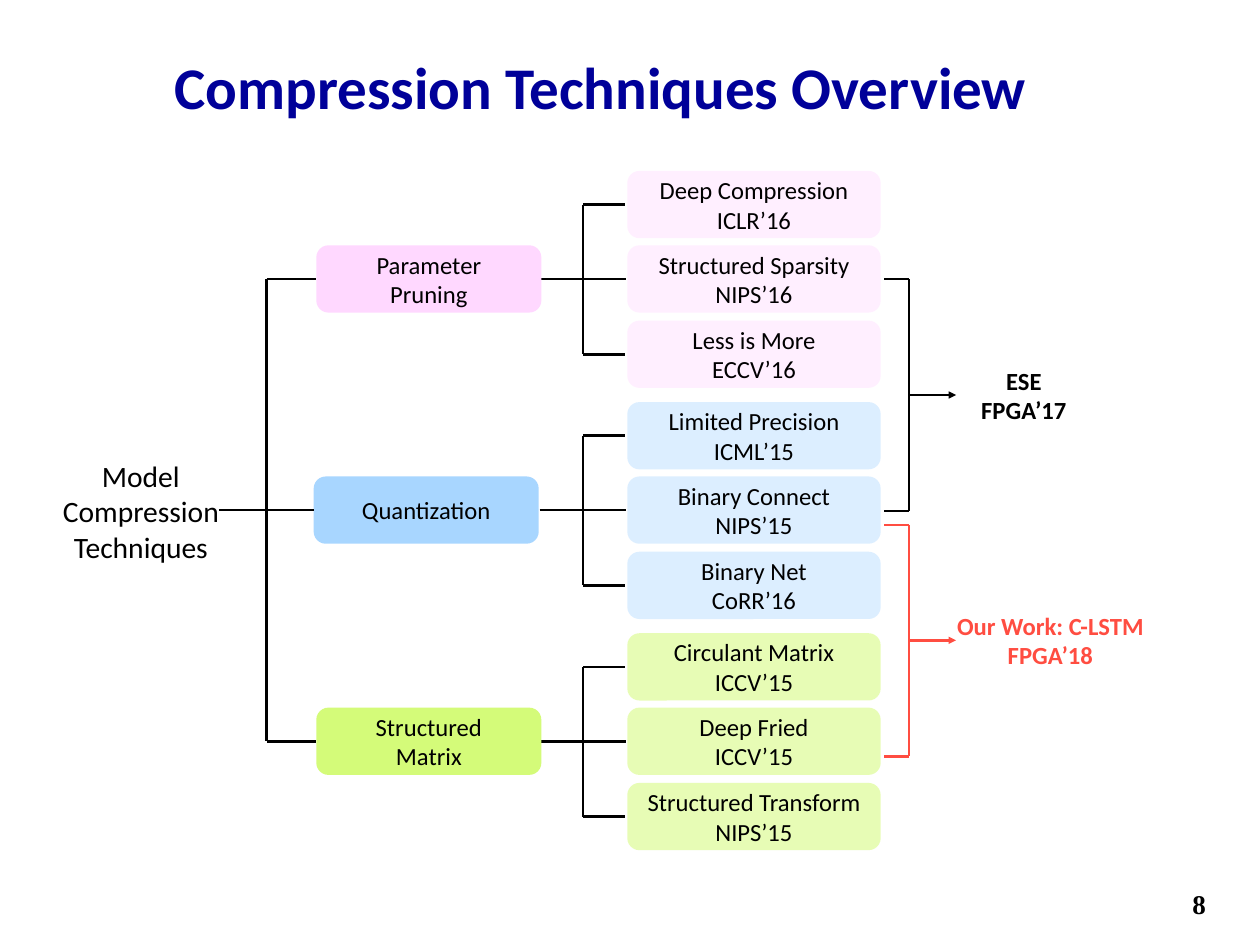
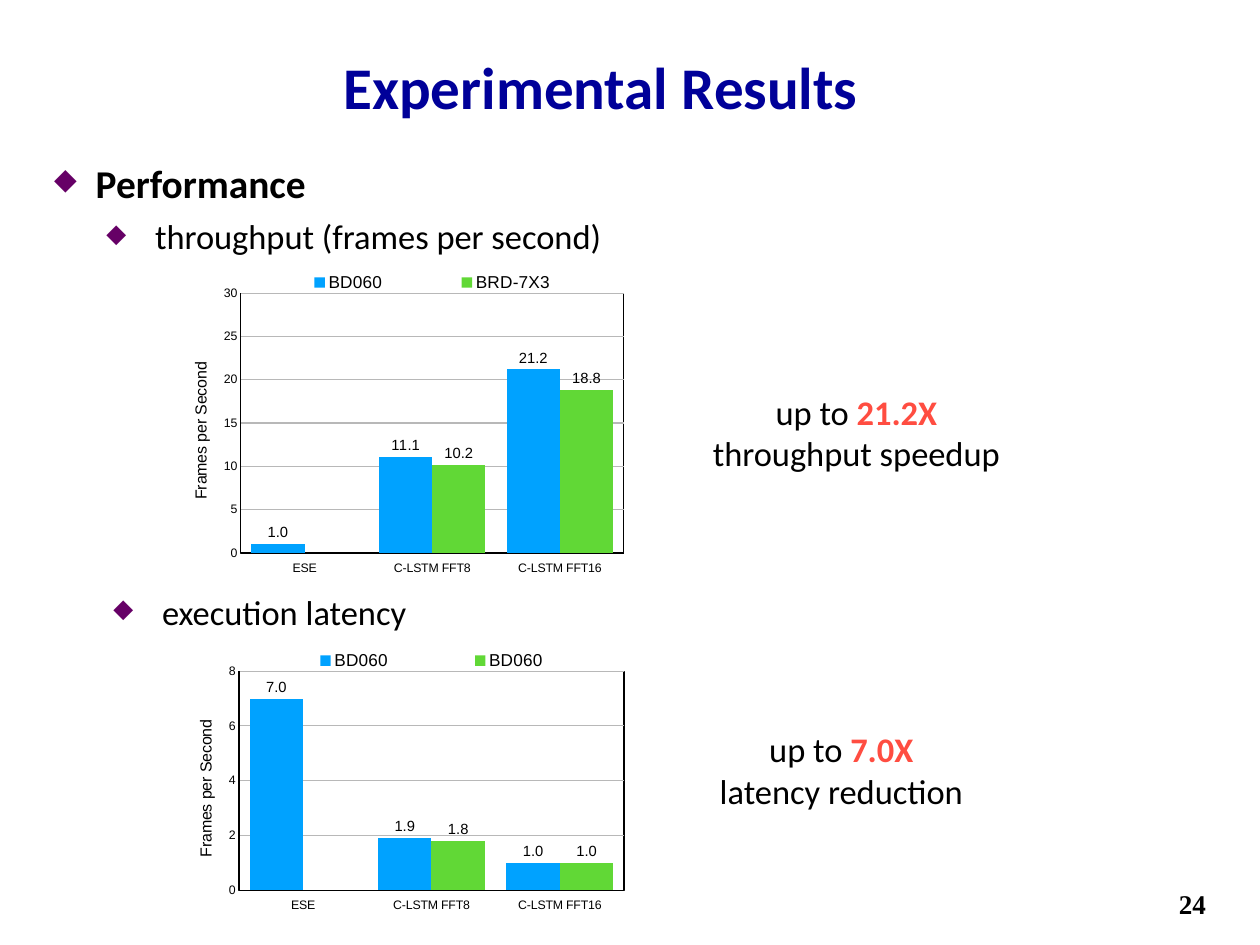
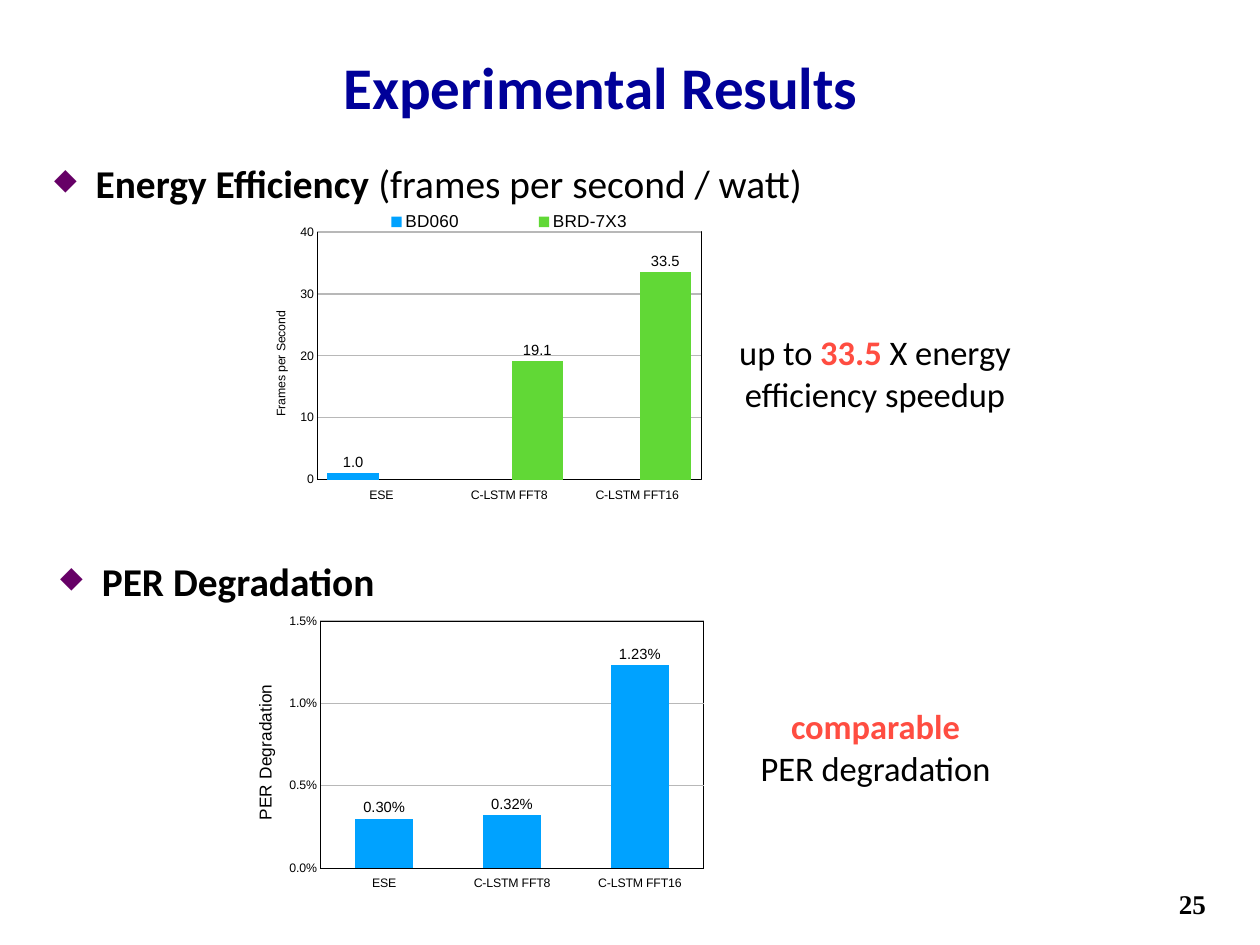
from lxml.etree import SubElement
from pptx import Presentation
from pptx.chart.data import CategoryChartData
from pptx.dml.color import RGBColor
from pptx.enum.chart import (XL_CHART_TYPE, XL_LABEL_POSITION, XL_LEGEND_POSITION,
                             XL_TICK_LABEL_POSITION, XL_TICK_MARK)
from pptx.enum.shapes import MSO_CONNECTOR, MSO_SHAPE
from pptx.enum.text import MSO_ANCHOR, PP_ALIGN
from pptx.oxml import parse_xml
from pptx.oxml.ns import nsdecls, qn
from pptx.util import Pt

PX = 9144  # 100 px to the inch
COLORS = {
    "title": "000099", "text": "000000", "accent": "FF4D41", "bullet": "660066",
    "pink": "FFD8FF", "sky": "A8D6FF", "lime": "D4FB79",
    "blue": "00A2FF", "green": "61D836", "grid": "B8B8B8",
}
RGB = {name: RGBColor.from_string(value) for name, value in COLORS.items()}
RUN_STYLES = {
    "plain": {"bold": False, "color": "text"},
    "bold": {"bold": True, "color": "text"},
    "accent": {"bold": True, "color": "accent"},
    "title": {"bold": True, "color": "title"},
}


def write_text(shape, lines, size, align=PP_ALIGN.CENTER, font="Calibri",
               anchor=MSO_ANCHOR.MIDDLE, inset=6, wrap=False, spacing=None):
    """Fill a shape; each line is a list of (text, run style) pairs."""
    frame = shape.text_frame
    frame.word_wrap = wrap
    frame.vertical_anchor = anchor
    for side in ("left", "top", "right", "bottom"):
        setattr(frame, f"margin_{side}", inset * PX)
    for index, runs in enumerate(lines):
        paragraph = frame.add_paragraph() if index else frame.paragraphs[0]
        paragraph.alignment = align
        paragraph.line_spacing = spacing
        for text, style in runs:
            run = paragraph.add_run()
            run.text = text
            run.font.name = font
            run.font.size = Pt(size)
            run.font.bold = RUN_STYLES[style]["bold"]
            run.font.color.rgb = RGB[RUN_STYLES[style]["color"]]
    return frame


def draw_line(slide, x1, y1, x2, y2, color="text", arrow=False):
    line = slide.shapes.add_connector(
        MSO_CONNECTOR.STRAIGHT, x1 * PX, y1 * PX, x2 * PX, y2 * PX)
    line.line.color.rgb = RGB[color]
    line.line.width = Pt(2)
    properties = line._element.spPr
    if arrow:
        SubElement(properties.find(qn("a:ln")), qn("a:tailEnd"), type="triangle")
    SubElement(properties, qn("a:effectLst"))


presentation = Presentation()
presentation.slide_width = 1422 * PX
presentation.slide_height = 1067 * PX

# Slides with title and number
slides = []
for title, number in [("Compression Techniques Overview", "8"),
                      ("Experimental Results", "24"),
                      ("Experimental Results", "25")]:
    slide = presentation.slides.add_slide(presentation.slide_layouts[6])
    slides.append(slide)
    box = slide.shapes.add_textbox(38 * PX, 50 * PX, 1280 * PX, 105 * PX)
    write_text(box, [[(title, "title")]], 48, inset=0, wrap=True, spacing=0.9)
    box = slide.shapes.add_textbox(1261 * PX, 1003 * PX, 100 * PX, 35 * PX)
    write_text(box, [[(number, "bold")]], 22, align=PP_ALIGN.RIGHT,
               font="Times New Roman", inset=0, wrap=True)
overview, performance, efficiency = slides

# Overview: tree of techniques
BOX_HEIGHT = 76
TRUNK_X, BRANCH_X = 301, 658
families = [
    (193, 357, "pink", 40, ["Parameter", "Pruning"],
     [("Deep Compression", "ICLR’16"), ("Structured Sparsity", "NIPS’16"),
      ("Less is More", "ECCV’16")]),
    (454, 354, "sky", 40, ["Quantization"],
     [("Limited Precision", "ICML’15"), ("Binary Connect", "NIPS’15"),
      ("Binary Net", "CoRR’16")]),
    (715, 357, "lime", 55, ["Structured", "Matrix"],
     [("Circulant Matrix", "ICCV’15"), ("Deep Fried", "ICCV’15"),
      ("Structured Transform", "NIPS’15")]),
]
family_middles = []
for top, family_left, color, opacity, family, papers in families:
    leaf_tops = [top + 169 * row // 2 for row in range(3)]
    first, middle, last = [leaf_top + BOX_HEIGHT // 2 for leaf_top in leaf_tops]
    family_middles.append(middle)
    draw_line(overview, BRANCH_X, first, BRANCH_X, last)
    draw_line(overview, 609, middle, 707, middle)
    for y in (first, last):
        draw_line(overview, BRANCH_X, y, 705, y)
    boxes = [(708, leaf_top, 286, opacity, paper)
             for leaf_top, paper in zip(leaf_tops, papers)]
    boxes.append((family_left, leaf_tops[1], 254, 100, family))
    for left, box_top, width, alpha, lines in boxes:
        shape = overview.shapes.add_shape(
            MSO_SHAPE.ROUNDED_RECTANGLE, left * PX, box_top * PX, width * PX, BOX_HEIGHT * PX)
        shape.adjustments[0] = 0.18
        shape.shadow.inherit = False
        shape.line.fill.background()
        shape.fill.solid()
        shape.fill.fore_color.rgb = RGB[color]
        if alpha < 100:
            fill_color = shape._element.spPr.find(qn("a:solidFill"))[0]
            SubElement(fill_color, qn("a:alpha"), val=str(alpha * 1000))
        write_text(shape, [[(line, "plain")] for line in lines], 20)

root = overview.shapes.add_textbox(61 * PX, 511 * PX, 196 * PX, 132 * PX)
write_text(root, [[(line, "plain")] for line in ("Model", "Compression", "Techniques")], 24)
draw_line(overview, TRUNK_X, family_middles[0], TRUNK_X, family_middles[2])
for start, y, end in zip((TRUNK_X, 247, TRUNK_X), family_middles, (357, 354, 357)):
    draw_line(overview, start, y, end, y)

# Overview: brackets to the combined works
for top, bottom, left, width, color, style, lines in [
        (315, 577, 1101, 109, "text", "bold", ["ESE", "FPGA’17"]),
        (593, 854, 1067, 237, "accent", "accent", ["Our Work: C-LSTM", "FPGA’18"])]:
    middle = (top + bottom) // 2
    for y in (top, bottom):
        draw_line(overview, 998, y, 1026, y, color)
    draw_line(overview, 1026, top, 1026, bottom, color)
    draw_line(overview, 1026, middle, 1079, middle, color, arrow=True)
    label = overview.shapes.add_textbox(left * PX, (middle - 39) * PX, width * PX, 78 * PX)
    write_text(label, [[(line, style)] for line in lines], 20)

# Bullets: size, height, inset, anchor, text indent and hanging indent by level
LEVELS = [(32, 68, 7, MSO_ANCHOR.TOP, 47, 47), (28, 60, 6, MSO_ANCHOR.MIDDLE, 99, 55)]
for slide, level, left, top, width, runs in [
        (performance, 0, 54, 162, 500, [("Performance", "bold")]),
        (performance, 1, 70, 232, 700, [("throughput (frames per second)", "plain")]),
        (performance, 1, 78, 656, 500, [("execution latency", "plain")]),
        (efficiency, 0, 54, 162, 950, [("Energy Efficiency", "bold"),
                                       (" (frames per second / watt)", "plain")]),
        (efficiency, 0, 61, 611, 500, [("PER Degradation", "bold")])]:
    size, height, inset, anchor, indent, hanging = LEVELS[level]
    box = slide.shapes.add_textbox(left * PX, top * PX, width * PX, height * PX)
    frame = write_text(box, [runs], size, align=PP_ALIGN.LEFT, anchor=anchor,
                       inset=inset, wrap=True, spacing=1.2)
    frame.paragraphs[0].level = level
    properties = frame.paragraphs[0]._p.get_or_add_pPr()
    properties.set("marL", str(indent * PX))
    properties.set("indent", str(-hanging * PX))
    bullet_color = SubElement(properties, qn("a:buClr"))
    SubElement(bullet_color, qn("a:srgbClr"), val=COLORS["bullet"])
    SubElement(properties, qn("a:buSzPct"), val="75000")
    SubElement(properties, qn("a:buChar"), char="◆")

# Findings beside the charts
for slide, left, top, width, lines in [
        (performance, 798, 434, 337, [[("up to ", "plain"), ("21.2X", "accent")],
                                      [("throughput speedup", "plain")]]),
        (performance, 806, 815, 287, [[("up to ", "plain"), ("7.0X", "accent")],
                                      [("latency reduction", "plain")]]),
        (efficiency, 819, 367, 337, [[("up to ", "plain"), ("33.5", "accent"),
                                      (" X energy", "plain")],
                                     [("efficiency speedup", "plain")]]),
        (efficiency, 852, 789, 272, [[("comparable", "accent")],
                                     [("PER degradation", "plain")]])]:
    box = slide.shapes.add_textbox(left * PX, top * PX, width * PX, 108 * PX)
    write_text(box, lines, 28)

# Charts
CATEGORIES = ["ESE", "C-LSTM FFT8", "C-LSTM FFT16"]
BOARD_A, BOARD_B = "BD060", "BRD-7X3"
charts = [
    {"slide": performance, "at": (212, 307, 497, 345), "plot": (0.12, 0.07, 0.87, 0.85),
     "title": ("Frames per Second", 13), "maximum": 30, "major": 5, "gap": 40, "overlap": 0,
     "formats": ("#,##0", "0.0"),
     "series": [(BOARD_A, (1, 11.1, 21.2)), (BOARD_B, (None, 10.2, 18.8))]},
    {"slide": performance, "at": (216, 734, 489, 298), "plot": (0.11, 0.08, 0.89, 0.83),
     "title": ("Frames per Second", 13), "maximum": 8, "major": 2, "gap": 40, "overlap": 0,
     "formats": ("#,##0", "0.0"),
     "series": [(BOARD_A, (7, 1.9, 1)), (BOARD_A, (None, 1.8, 1))]},
    {"slide": efficiency, "at": (299, 239, 493, 329), "plot": (0.12, 0.07, 0.88, 0.85),
     "title": ("Frames per Second", 10), "maximum": 40, "major": 10, "gap": 40, "overlap": -10,
     "formats": ("#,##0", "0.0"),
     "series": [(BOARD_A, (1, None, None)), (BOARD_B, (None, 19.1, 33.5))]},
    {"slide": efficiency, "at": (279, 685, 516, 321), "plot": (0.16, 0.05, 0.84, 0.87),
     "title": ("PER Degradation", 14), "maximum": 0.015, "major": 0.005, "gap": 120,
     "overlap": -10, "formats": ("#,##0.0%", "0.00%"),
     "series": [("Series 1", (0.003, 0.0032, 0.0123))]},
]
for spec_chart in charts:
    axis_format, label_format = spec_chart["formats"]
    data = CategoryChartData(number_format=label_format)
    data.categories = CATEGORIES
    for name, values in spec_chart["series"]:
        data.add_series(name, values)
    chart = spec_chart["slide"].shapes.add_chart(
        XL_CHART_TYPE.COLUMN_CLUSTERED, *[length * PX for length in spec_chart["at"]],
        data).chart
    chart.has_title = False
    chart.has_legend = len(spec_chart["series"]) > 1
    plot = chart.plots[0]
    for attribute, value in {"gap_width": spec_chart["gap"], "overlap": spec_chart["overlap"],
                             "vary_by_categories": False}.items():
        setattr(plot, attribute, value)

    fonts = [(chart.font, 10)]
    for series, color in zip(plot.series, ("blue", "green")):
        series.format.fill.solid()
        series.format.fill.fore_color.rgb = RGB[color]
        labels = series.data_labels
        for attribute, value in {"show_value": True, "number_format": label_format,
                                 "number_format_is_linked": False,
                                 "position": XL_LABEL_POSITION.OUTSIDE_END}.items():
            setattr(labels, attribute, value)
        fonts.append((labels.font, 12))

    value_axis = chart.value_axis
    for attribute, value in {"minimum_scale": 0, "maximum_scale": spec_chart["maximum"],
                             "major_unit": spec_chart["major"],
                             "has_major_gridlines": True}.items():
        setattr(value_axis, attribute, value)
    value_axis.tick_labels.number_format = axis_format
    value_axis.tick_labels.number_format_is_linked = False
    chart.category_axis.tick_label_position = XL_TICK_LABEL_POSITION.LOW
    lines = [(value_axis.major_gridlines.format.line, "grid")]
    for axis in (value_axis, chart.category_axis):
        axis.major_tick_mark = axis.minor_tick_mark = XL_TICK_MARK.NONE
        lines.append((axis.format.line, "text"))
        fonts.append((axis.tick_labels.font, 10))
    for line, color in lines:
        line.color.rgb = RGB[color]
        line.width = Pt(1)

    title, title_size = spec_chart["title"]
    title_frame = value_axis.axis_title.text_frame
    title_frame.text = title
    title_frame._txBody.find(qn("a:bodyPr")).set("rot", "-5400000")
    fonts.append((title_frame.paragraphs[0].runs[0].font, title_size))

    x, y, width, height = spec_chart["plot"]
    plot_area = chart._chartSpace.chart.plotArea
    layouts = [(plot_area, 0, "inner", spec_chart["plot"])]
    if chart.has_legend:
        chart.legend.position = XL_LEGEND_POSITION.TOP
        chart.legend.include_in_layout = True
        fonts.append((chart.legend.font, 14))
        layouts.append((chart.legend._element, 1, None, (x, 0, width, y)))
    for parent, index, target, bounds in layouts:
        for layout in parent.findall(qn("c:layout")):
            parent.remove(layout)
        layout = parse_xml(f"<c:layout {nsdecls('c')}><c:manualLayout/></c:layout>")
        settings = [("layoutTarget", target)] if target else []
        settings += [("xMode", "edge"), ("yMode", "edge"), *zip("xywh", bounds)]
        for tag, value in settings:
            SubElement(layout[0], qn(f"c:{tag}"), val=str(value))
        parent.insert(index, layout)
    plot_area.append(parse_xml(
        f'<c:spPr {nsdecls("c", "a")}><a:noFill/><a:ln w="12700"><a:solidFill>'
        f'<a:srgbClr val="{COLORS["text"]}"/></a:solidFill></a:ln></c:spPr>'))

    for font, size in fonts:
        for attribute, value in {"name": "Arial", "size": Pt(size), "bold": False}.items():
            setattr(font, attribute, value)
        font.color.rgb = RGB["text"]

presentation.save("out.pptx")
